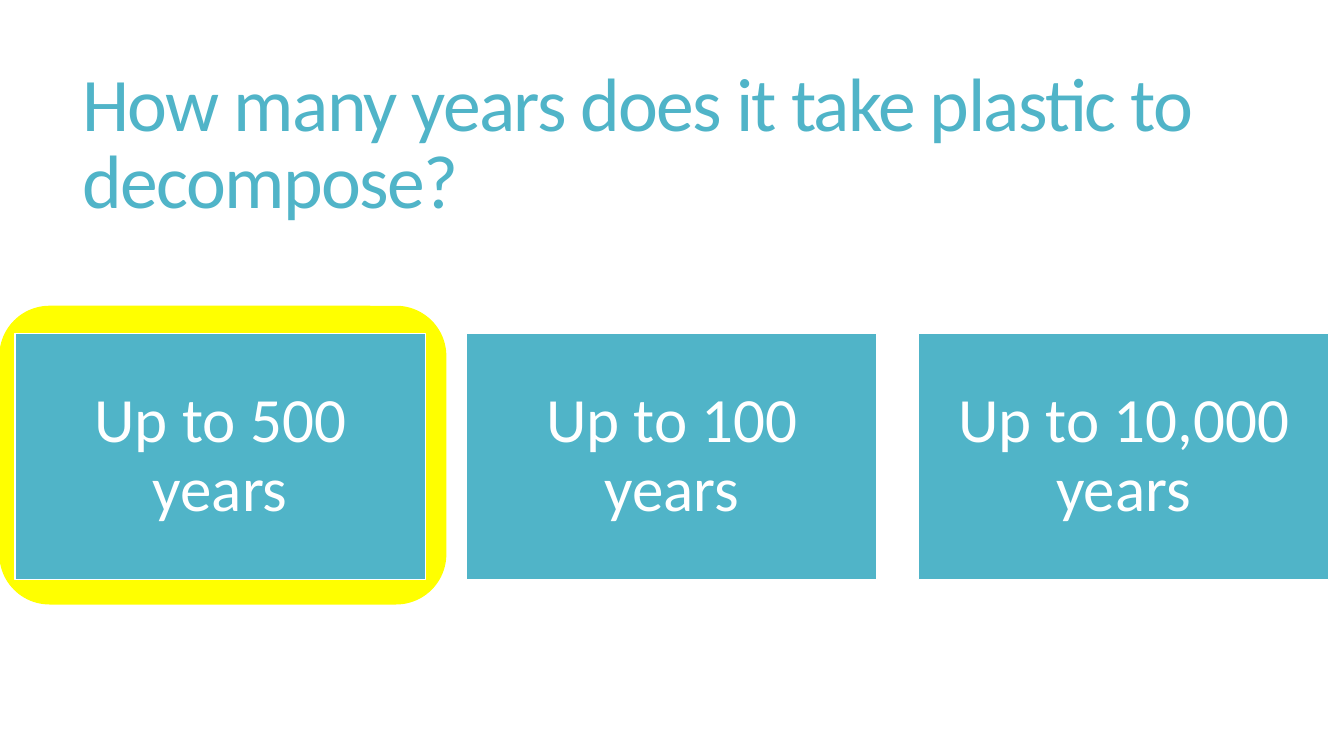
from pptx import Presentation
from pptx.dml.color import RGBColor
from pptx.enum.shapes import MSO_SHAPE as SHAPE
from pptx.enum.text import MSO_ANCHOR as ANCHOR, PP_ALIGN as ALIGN
from pptx.util import Inches, Pt

TEAL, WHITE, YELLOW = "50B4C8", "FFFFFF", "FFFF00"


def color(hex_code):
    return RGBColor.from_string(hex_code)


def add_box(kind, left, top, width, height, fill, line):
    box = slide.shapes.add_shape(
        kind, Inches(left), Inches(top), Inches(width), Inches(height))
    box.shadow.inherit = False
    box.fill.solid()
    box.fill.fore_color.rgb = color(fill)
    box.line.color.rgb = color(line)
    box.line.width = Pt(1)
    return box


prs = Presentation()
prs.slide_width, prs.slide_height = Inches(13.33), Inches(7.5)
slide = prs.slides.add_slide(prs.slide_layouts[6])

# Highlight behind the correct answer
add_box(SHAPE.ROUNDED_RECTANGLE, 0, 3.04, 4.42, 2.95, YELLOW, YELLOW)

# Question
question = slide.shapes.add_textbox(
    Inches(0.72), Inches(0.55), Inches(11.78), Inches(1.81)).text_frame
question.word_wrap = True
question.vertical_anchor = ANCHOR.MIDDLE
question_line = question.paragraphs[0]
question_line.text = "How many years does it take plastic to decompose?"
question_line.line_spacing = 0.85
question_line.font.name = "Calibri"
question_line.font.size = Pt(54)
question_line.font.color.rgb = color(TEAL)
# Tighter letter spacing, in hundredths of a point
question_line.runs[0].font._element.set("spc", "-120")

# Answer options
for i, answer in enumerate(["Up to 500 years", "Up to 100 years", "Up to 10,000 years"]):
    option = add_box(SHAPE.RECTANGLE, 0.15 + i * 4.48, 3.31, 4.07, 2.44, TEAL, WHITE)
    frame = option.text_frame
    frame.word_wrap = True
    frame.vertical_anchor = ANCHOR.MIDDLE
    frame.margin_left = frame.margin_right = Inches(0.19)
    frame.margin_top = frame.margin_bottom = Inches(0.19)
    label = frame.paragraphs[0]
    label.text = answer
    label.alignment = ALIGN.CENTER
    label.line_spacing = 0.9
    label.font.name = "Calibri"
    label.font.size = Pt(45)
    label.font.color.rgb = color(WHITE)

prs.save("out.pptx")
